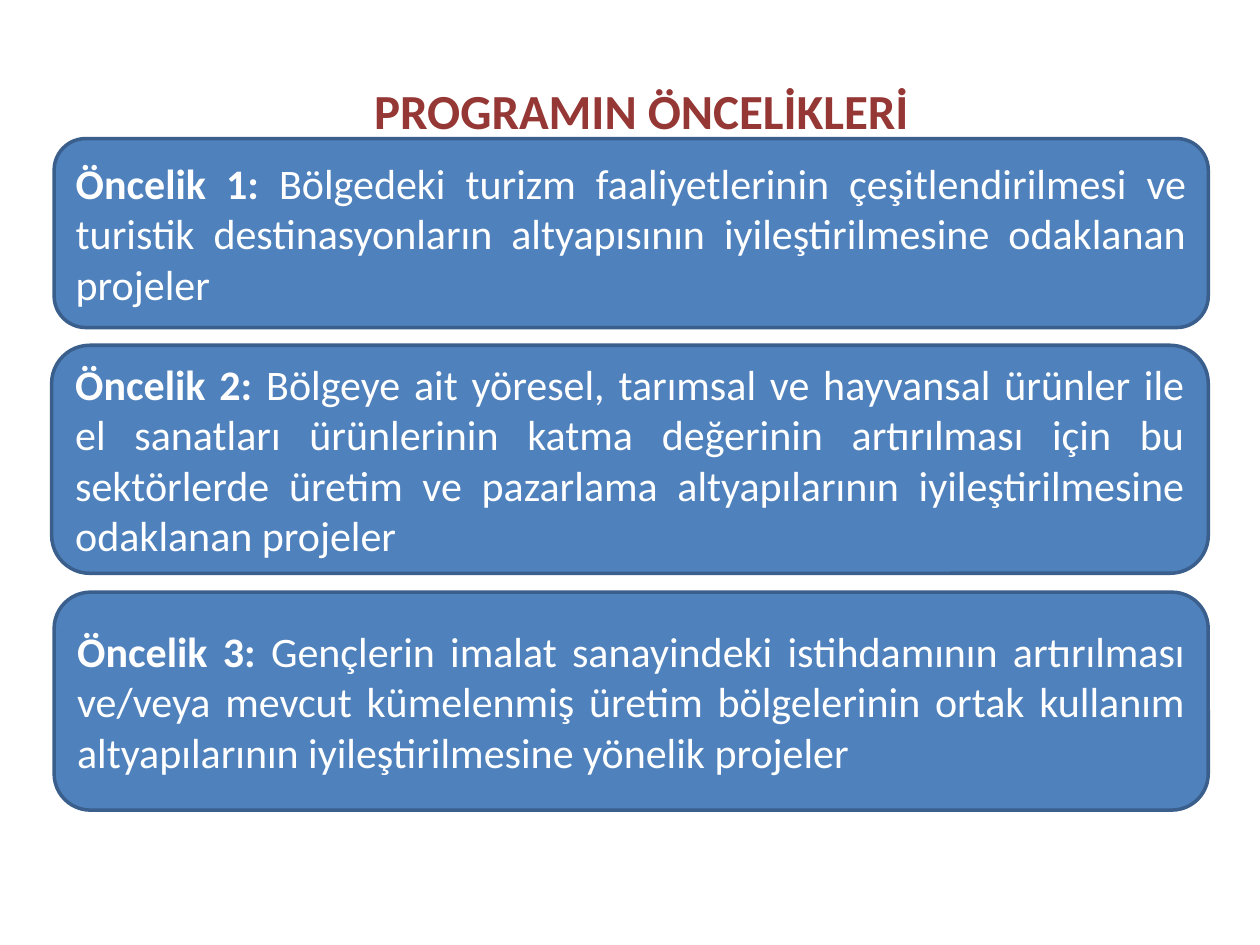
"""Build the slide listing the three priorities of the programme."""
from dataclasses import dataclass

from pptx import Presentation
from pptx.dml.color import RGBColor
from pptx.enum.shapes import MSO_SHAPE
from pptx.enum.text import MSO_ANCHOR, PP_ALIGN
from pptx.slide import Slide
from pptx.text.text import _Paragraph
from pptx.util import Inches, Pt

ROUNDED_BOX = MSO_SHAPE.FLOWCHART_ALTERNATE_PROCESS
MIDDLE = MSO_ANCHOR.MIDDLE
CENTER = PP_ALIGN.CENTER
JUSTIFY = PP_ALIGN.JUSTIFY


@dataclass(frozen=True)
class Theme:
    font: str = "Calibri"
    title_color: str = "953735"
    text_color: str = "FFFFFF"
    box_fill: str = "4F81BD"
    box_line: str = "3A5F8C"
    title_size: int = 28
    body_size: int = 24
    line_width: int = 2


@dataclass(frozen=True)
class Priority:
    number: int
    left: float
    top: float
    height: float
    description: str


THEME = Theme()
BOX_RIGHT = 9.59
PRIORITIES = (
    Priority(1, 0.43, 1.1, 1.5,
             "Bölgedeki turizm faaliyetlerinin çeşitlendirilmesi ve turistik "
             "destinasyonların altyapısının iyileştirilmesine odaklanan projeler"),
    Priority(2, 0.41, 2.74, 1.81,
             "Bölgeye ait yöresel, tarımsal ve hayvansal ürünler ile el sanatları "
             "ürünlerinin katma değerinin artırılması için bu sektörlerde üretim ve "
             "pazarlama altyapılarının iyileştirilmesine odaklanan projeler"),
    Priority(3, 0.43, 4.7, 1.73,
             "Gençlerin imalat sanayindeki istihdamının artırılması ve/veya mevcut "
             "kümelenmiş üretim bölgelerinin ortak kullanım altyapılarının "
             "iyileştirilmesine yönelik projeler"),
)


def add_span(para: _Paragraph, text: str, size: int, color: str, bold: bool) -> None:
    span = para.add_run()
    span.text = text
    formats = {"name": THEME.font, "size": Pt(size), "bold": bold}
    for name, value in formats.items():
        setattr(span.font, name, value)
    span.font.color.rgb = RGBColor.from_string(color)


def add_title(slide: Slide, text: str) -> None:
    title = slide.shapes.title
    position = {"left": 0.59, "top": 0.52, "width": 9, "height": 0.71}
    for name, value in position.items():
        setattr(title, name, Inches(value))
    title.text_frame.vertical_anchor = MIDDLE
    para = title.text_frame.paragraphs[0]
    para.alignment = CENTER
    add_span(para, text, THEME.title_size, THEME.title_color, True)


def add_priority(slide: Slide, priority: Priority) -> None:
    box = slide.shapes.add_shape(
        ROUNDED_BOX, Inches(priority.left), Inches(priority.top),
        Inches(BOX_RIGHT - priority.left), Inches(priority.height))
    box.shadow.inherit = False
    box.fill.solid()
    box.fill.fore_color.rgb = RGBColor.from_string(THEME.box_fill)
    box.line.color.rgb = RGBColor.from_string(THEME.box_line)
    box.line.width = Pt(THEME.line_width)
    frame_formats = {"word_wrap": True, "vertical_anchor": MIDDLE}
    for name, value in frame_formats.items():
        setattr(box.text_frame, name, value)
    para = box.text_frame.paragraphs[0]
    para.alignment = JUSTIFY
    spans = ((f"Öncelik {priority.number}: ", True), (priority.description, False))
    for text, bold in spans:
        add_span(para, text, THEME.body_size, THEME.text_color, bold)


def main() -> None:
    deck = Presentation()
    deck.slide_width, deck.slide_height = Inches(10), Inches(7.5)
    slide = deck.slides.add_slide(deck.slide_layouts[5])
    add_title(slide, "PROGRAMIN ÖNCELİKLERİ")
    for priority in PRIORITIES:
        add_priority(slide, priority)
    deck.save("out.pptx")


if __name__ == "__main__":
    main()
